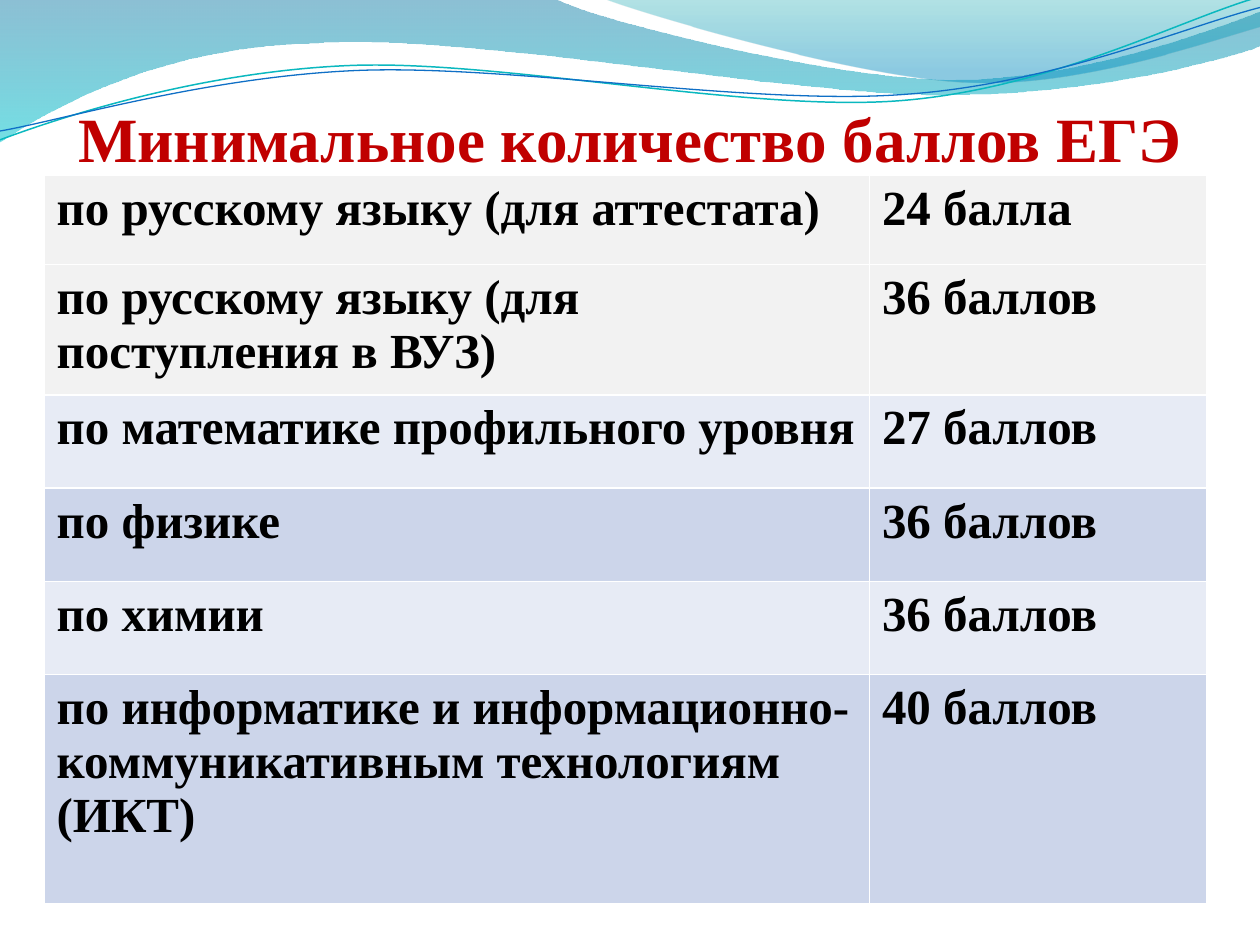
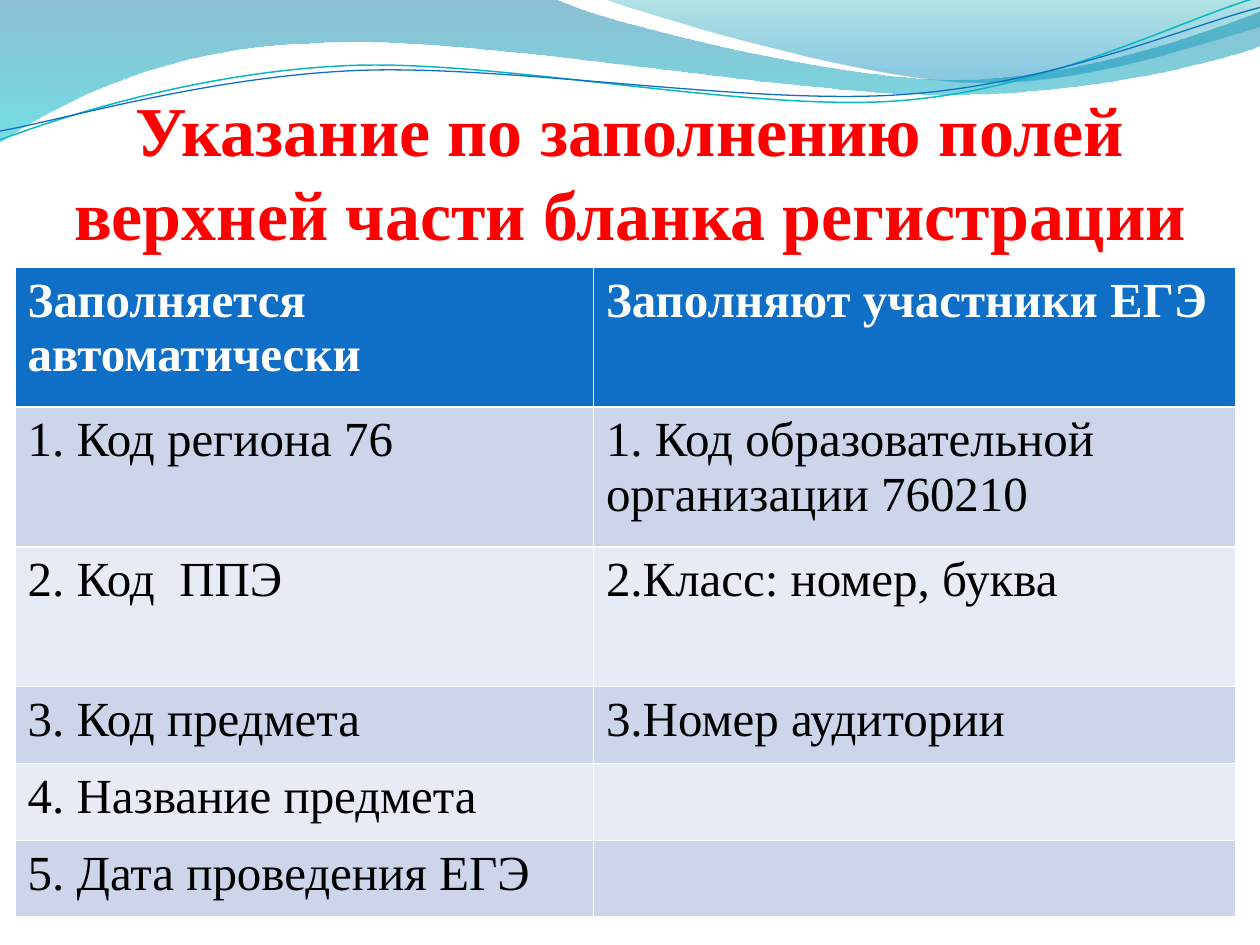
import math

from pptx import Presentation
from pptx import util as u
from pptx.dml.color import RGBColor
from pptx.enum import text
from pptx.oxml import ns
from lxml import etree

FONT = "Times New Roman"
WHITE = RGBColor(0xFF, 0xFF, 0xFF)
BLACK = RGBColor(0x00, 0x00, 0x00)
DARK_RED = RGBColor(0xC0, 0x00, 0x00)
RED = RGBColor(0xFF, 0x00, 0x00)
BLUE = RGBColor(0x0F, 0x6F, 0xC6)
TEAL = RGBColor(0x0A, 0xB8, 0xBF)
GREY = RGBColor(0xF2, 0xF2, 0xF2)
BAND_LIGHT = RGBColor(0xE7, 0xEB, 0xF5)
BAND_DARK = RGBColor(0xCC, 0xD5, 0xEA)
LINE_TILT = 2.7  # degrees counterclockwise

# Header waves: start point, then curves (two controls and an end) or line ends.
# Gradient stops are position, colour and opacity in percent.
WAVES = [
    dict(points=[[(0, 0)],
                 [(4.4, -0.01)],
                 [(4.76, 0.17), (6.64, 0.63), (7.58, 0.63)],
                 [(8.53, 0.63), (9.58, 0.26), (10, 0.09)],
                 [(10.01, 0.36)],
                 [(9.83, 0.44), (8.7, 0.76), (7.46, 0.75)],
                 [(6.22, 0.75), (3.82, 0.28), (2.57, 0.34)],
                 [(1.29, 0.36), (0.46, 0.83), (-0.01, 1.13)]],
         stops=[(0, RGBColor(0x00, 0x74, 0xA1), 45),
                (1, RGBColor(0x00, 0xC6, 0xCF), 55)]),
    dict(points=[[(4.79, -0.01)],
                 [(5.09, 0.11), (6.82, 0.62), (7.69, 0.65)],
                 [(8.56, 0.69), (9.61, 0.32), (10, 0.21)],
                 [(10, 0)]],
         stops=[(0, RGBColor(0x00, 0xA1, 0xA9), 30),
                (0.8, RGBColor(0x00, 0x8B, 0xBF), 45)]),
    dict(points=[[(0, 1.11)],
                 [(0.48, 0.93), (1.58, 0.57), (2.77, 0.52)],
                 [(3.95, 0.47), (5.93, 0.89), (7.13, 0.8)],
                 [(8.33, 0.71), (9.38, 0.15), (9.98, -0.02)]],
         line=(TEAL, 0.85), center=(4.99, 0.58)),
    dict(points=[[(0, 1.04)],
                 [(0.47, 0.96), (1.64, 0.61), (2.83, 0.56)],
                 [(4.03, 0.51), (5.97, 0.84), (7.17, 0.75)],
                 [(8.36, 0.67), (9.41, 0.21), (10, 0.06)]],
         line=(BLUE, 0.75), center=(5, 0.59)),
]

# Each row of a table: height, fill, cell texts
SLIDES = [
    dict(title="Минимальное количество баллов ЕГЭ", size=36, color=DARK_RED,
         title_height=0.62, table_at=(0.35, 1.39), columns=(6.55, 2.68),
         head_color=BLACK, body_bold=True,
         rows=[
             (0.71, GREY, "по русскому языку (для аттестата)", "24 балла"),
             (0.74, GREY, "по русскому языку (для поступления в ВУЗ)", "36 баллов"),
             (0.74, BAND_LIGHT, "по математике профильного уровня", "27 баллов"),
             (0.74, BAND_DARK, "по физике", "36 баллов"),
             (0.74, BAND_LIGHT, "по химии", "36 баллов"),
             (1.82, BAND_DARK, "по информатике и информационно-коммуникативным "
                               "технологиям (ИКТ)", "40 баллов"),
         ]),
    dict(title="Указание по заполнению полей верхней части бланка регистрации",
         size=40, color=RED,
         title_height=1.25, table_at=(0.12, 2.12), columns=(4.59, 5.1),
         head_color=WHITE, body_bold=False,
         rows=[
             (1.11, BLUE, "Заполняется автоматически", "Заполняют участники ЕГЭ"),
             (1.11, BAND_DARK, "1. Код региона 76",
              "1. Код образовательной организации 760210"),
             (1.11, BAND_LIGHT, "2. Код  ППЭ", "2.Класс: номер, буква"),
             (0.61, BAND_DARK, "3. Код предмета", "3.Номер аудитории"),
             (0.61, BAND_LIGHT, "4. Название предмета", ""),
             (0.61, BAND_DARK, "5. Дата проведения ЕГЭ", ""),
         ]),
]


def level(point, center):
    """Turn a point clockwise by the tilt, so that the shape can be rotated back."""
    dx, dy = point[0] - center[0], point[1] - center[1]
    angle = math.radians(LINE_TILT)
    return (center[0] + dx * math.cos(angle) - dy * math.sin(angle),
            center[1] + dx * math.sin(angle) + dy * math.cos(angle))


def style_text(para, size, color, bold):
    for span in para.runs:
        span.font.name = FONT
        span.font.size = u.Pt(size)
        span.font.bold = bold
        span.font.color.rgb = color


deck = Presentation()
deck.slide_width, deck.slide_height = u.Inches(10), u.Inches(7.5)

for content in SLIDES:
    page = deck.slides.add_slide(deck.slide_layouts[6])

    # Header waves
    for wave in WAVES:
        is_band = "stops" in wave
        points = [point for part in wave["points"] for point in part]
        if not is_band:
            points = [level(point, wave["center"]) for point in points]
        points = [(u.Inches(x), u.Inches(y)) for x, y in points]
        builder = page.shapes.build_freeform(*points[0])
        builder.add_line_segments(points[1:], close=is_band)
        shape = builder.convert_to_shape()
        shape.shadow.inherit = False

        # Join every two controls and their end into one Bezier curve
        segments = iter(list(shape._element.iter(ns.qn("a:lnTo"))))
        for part in wave["points"][1:]:
            group = [next(segments) for _ in part]
            if len(group) == 3:
                curve = etree.Element(ns.qn("a:cubicBezTo"))
                group[0].addprevious(curve)
                for segment in group:
                    curve.append(segment[0])
                    segment.getparent().remove(segment)

        if is_band:
            shape.line.fill.background()
            shape.fill.gradient()
            shape.fill.gradient_angle = 270
            for stop, (position, color, _) in zip(shape.fill.gradient_stops, wave["stops"]):
                stop.position = position
                stop.color.rgb = color
            colors = shape._element.spPr.iter(ns.qn("a:srgbClr"))
            for node, (_, _, opacity) in zip(list(colors), wave["stops"]):
                etree.SubElement(node, ns.qn("a:alpha"), val=str(opacity * 1000))
        else:
            shape.rotation = 360 - LINE_TILT
            shape.fill.background()
            color, width = wave["line"]
            shape.line.color.rgb = color
            shape.line.width = u.Pt(width)

    # Title
    box = page.shapes.add_textbox(u.Inches(0.5), u.Inches(0.77),
                                  u.Inches(9), u.Inches(content["title_height"]))
    frame = box.text_frame
    frame.word_wrap = True
    frame.vertical_anchor = text.MSO_ANCHOR.BOTTOM
    frame.margin_left = frame.margin_right = frame.margin_bottom = 0
    frame.text = content["title"]
    para = frame.paragraphs[0]
    para.alignment = text.PP_ALIGN.CENTER
    style_text(para, content["size"], content["color"], True)

    # Table, with the white borders of its default style
    rows, columns = content["rows"], content["columns"]
    left, top = content["table_at"]
    table = page.shapes.add_table(
        len(rows), len(columns), u.Inches(left), u.Inches(top),
        u.Inches(sum(columns)), u.Inches(sum(row[0] for row in rows))).table
    for column, width in zip(table.columns, columns):
        column.width = u.Inches(width)
    for index, (height, fill, *words) in enumerate(rows):
        table.rows[index].height = u.Inches(height)
        is_head = index == 0
        for cell, word in zip(table.rows[index].cells, words):
            cell.text_frame.text = word
            style_text(cell.text_frame.paragraphs[0], 28,
                       content["head_color"] if is_head else BLACK,
                       is_head or content["body_bold"])
            cell.fill.solid()
            cell.fill.fore_color.rgb = fill

deck.save("out.pptx")
